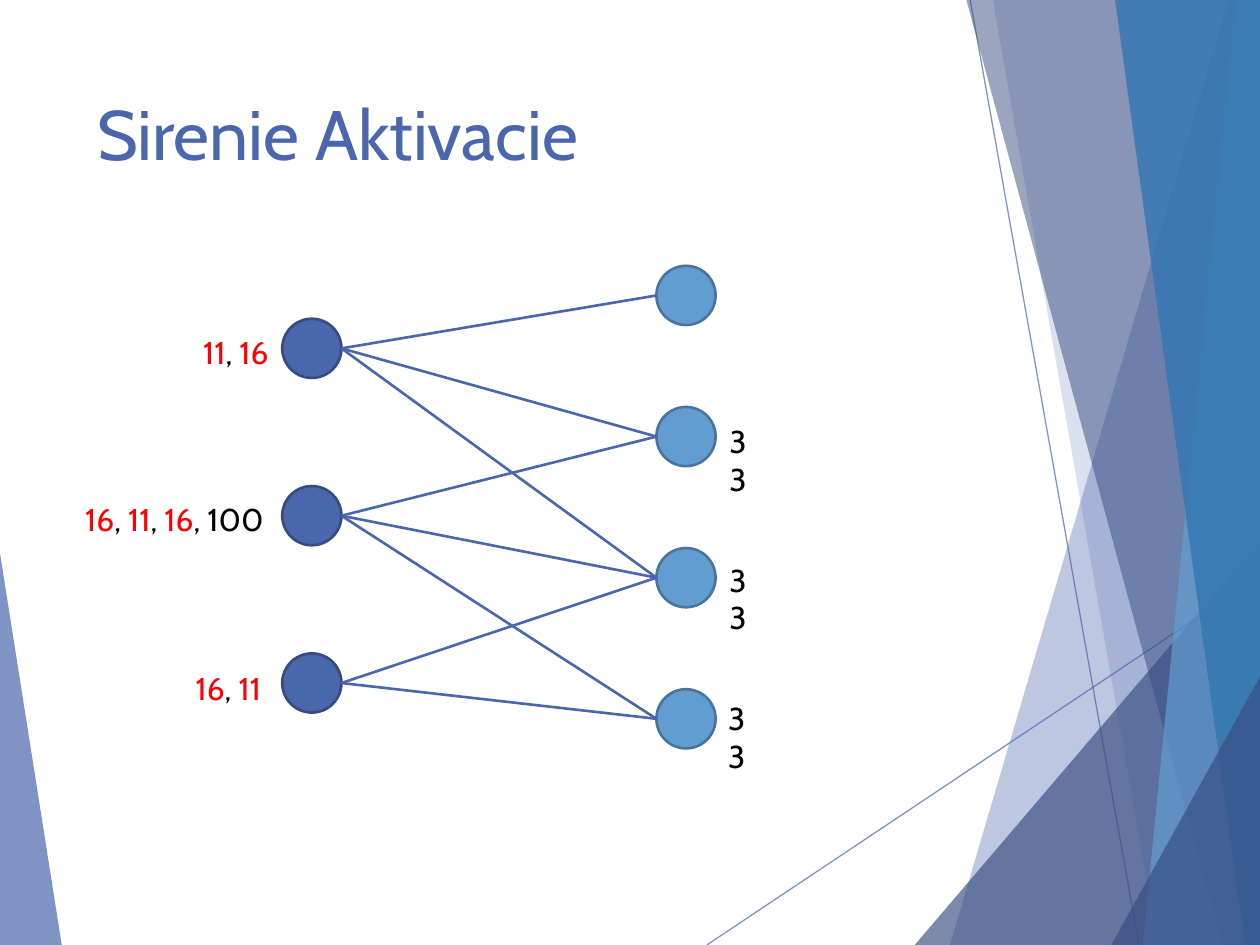
"""Builds the "Sirenie Aktivacie" slide: a two-layer network beside angular facets."""
from dataclasses import dataclass

from lxml import etree
from pptx import Presentation
from pptx.dml.color import RGBColor
from pptx.enum.shapes import MSO_CONNECTOR, MSO_SHAPE
from pptx.enum.text import MSO_ANCHOR, PP_ALIGN
from pptx.oxml.ns import qn
from pptx.util import Inches, Pt

STRAIGHT = MSO_CONNECTOR.STRAIGHT
OVAL = MSO_SHAPE.OVAL
TOP = MSO_ANCHOR.TOP
LEFT, RIGHT = PP_ALIGN.LEFT, PP_ALIGN.RIGHT

WIDTH, HEIGHT = Inches(10), Inches(7.5)
COLS, ROWS = 100, 75
FONT = "Cabin"
BLUE, NAVY, SKY, OCEAN = "4A66AC", "384C81", "629DD1", "3477B2"
RED, BLACK = "FF0000", "000000"
NODE = 4.7


@dataclass
class Facet:
    """A translucent polygon, with its corners in grid units."""
    points: list[tuple[float, float]]
    color: str
    opacity: int


@dataclass
class Layer:
    """A column of evenly spaced nodes."""
    left: float
    top: float
    step: float
    count: int
    fill: str
    line: str

    def y(self, i: int) -> float:
        """Return the top of node i."""
        return self.top + i * self.step


@dataclass
class Label:
    """A text box made of coloured runs."""
    left: float
    top: float
    width: float
    runs: list[tuple[str, str]]
    align: int = RIGHT
    wrap: bool = False


FACETS = [
    Facet([(0, 43.9), (4.9, 75), (0, 75)], BLUE, 70),
    Facet([(97.5, 0), (75.4, 75), (100, 75), (100, 0)], BLUE, 36),
    Facet([(78.8, 0), (91.9, 75), (100, 75), (100, 0)], BLUE, 20),
    Facet([(72.6, 75), (100, 42.9), (100, 75)], NAVY, 66),
    Facet([(76.7, 0), (97, 75), (100, 75), (100, 0)], NAVY, 50),
    Facet([(98.1, 0), (90.7, 75), (100, 75), (100, 0)], SKY, 70),
    Facet([(88.5, 0), (98.8, 75), (100, 75), (100, 0)], OCEAN, 82),
    Facet([(88.2, 75), (100, 53.7), (100, 75)], NAVY, 66),
]
RAYS = [((56.1, 75), (100, 45.7)), ((77, 0), (90.4, 75))]
INPUTS = Layer(22.4, 25.3, 13.28, 3, BLUE, "374B7F")
OUTPUTS = Layer(52.1, 21.1, 11.2, 4, SKY, "49749B")
EDGES = [(0, 0), (0, 1), (0, 2), (1, 1), (1, 2), (1, 3), (2, 2), (2, 3)]
COMMA = (", ", BLACK)
LABELS = [
    Label(14, 25.9, 8.3, [("11", RED), COMMA, ("16", RED)]),
    Label(4.7, 39.2, 17.2, [("16", RED), COMMA, ("11", RED), COMMA,
                            ("16", RED), (", 100", BLACK)]),
    Label(13.4, 52.6, 8.3, [("16", RED), COMMA, ("11", RED)]),
] + [Label(left, top, 4.6, [("33", BLACK)], LEFT, True)
     for left, top in ((56.9, 33), (56.9, 44), (56.8, 55))]


def gx(cols: float) -> int:
    """Convert grid columns to a length."""
    return round(WIDTH * cols / COLS)


def gy(rows: float) -> int:
    """Convert grid rows to a length."""
    return round(HEIGHT * rows / ROWS)


def rgb(color: str) -> RGBColor:
    """Convert a hex string to a colour."""
    return RGBColor.from_string(color)


def set_opacity(s, percent: int) -> None:
    """Make the shape's first solid colour translucent."""
    color = next(s._element.spPr.iter(qn("a:srgbClr")))
    etree.SubElement(color, qn("a:alpha")).set("val", str(percent * 1000))


def add_facet(slide, facet: Facet) -> None:
    """Draw one background polygon."""
    points = [(gx(x), gy(y)) for x, y in facet.points]
    builder = slide.shapes.build_freeform(*points[0])
    builder.add_line_segments(points[1:], close=True)
    s = builder.convert_to_shape()
    s.shadow.inherit = False
    s.fill.solid()
    s.fill.fore_color.rgb = rgb(facet.color)
    s.line.fill.background()
    set_opacity(s, facet.opacity)


def add_line(slide, start: tuple[float, float], end: tuple[float, float],
             weight: float, opacity: int = 100) -> None:
    """Draw a straight blue line between two grid points."""
    s = slide.shapes.add_connector(STRAIGHT, gx(start[0]), gy(start[1]),
                                   gx(end[0]), gy(end[1]))
    s.line.color.rgb = rgb(BLUE)
    s.line.width = Pt(weight)
    if opacity < 100:
        set_opacity(s, opacity)
    etree.SubElement(s._element.spPr, qn("a:effectLst"))


def add_layer(slide, layer: Layer) -> None:
    """Draw the nodes of one layer."""
    for i in range(layer.count):
        s = slide.shapes.add_shape(OVAL, gx(layer.left), gy(layer.y(i)),
                                   gx(NODE), gy(NODE))
        s.shadow.inherit = False
        s.fill.solid()
        s.fill.fore_color.rgb = rgb(layer.fill)
        s.line.color.rgb = rgb(layer.line)
        s.line.width = Pt(1.5)


def add_label(slide, label: Label) -> None:
    """Write one label with its coloured runs."""
    s = slide.shapes.add_textbox(gx(label.left), gy(label.top),
                                 gx(label.width), gy(4))
    tf = s.text_frame
    tf.word_wrap = label.wrap
    p = tf.paragraphs[0]
    p.alignment = label.align
    p.font.name, p.font.size = FONT, Pt(18)
    for text, color in label.runs:
        r = p.add_run()
        r.text = text
        r.font.name, r.font.size = FONT, Pt(18)
        r.font.color.rgb = rgb(color)


def set_title(slide, text: str) -> None:
    """Place and format the title placeholder."""
    s = slide.shapes.title
    s.left, s.top, s.width, s.height = gx(6.7), gy(6.7), gx(69.4), gy(14.4)
    tf = s.text_frame
    tf.text = text
    tf.vertical_anchor = TOP
    p = tf.paragraphs[0]
    p.alignment = LEFT
    p.font.name, p.font.size = FONT, Pt(40)
    p.font.color.rgb = rgb(BLUE)


def main() -> None:
    """Build and save the slide."""
    prs = Presentation()
    prs.slide_width, prs.slide_height = WIDTH, HEIGHT
    slide = prs.slides.add_slide(prs.slide_layouts[5])
    set_title(slide, "Sirenie Aktivacie")
    add_facet(slide, FACETS[0])
    for start, end in RAYS:
        add_line(slide, start, end, 0.75, 70)
    for facet in FACETS[1:]:
        add_facet(slide, facet)
    for layer in (INPUTS, OUTPUTS):
        add_layer(slide, layer)
    for i, j in EDGES:
        add_line(slide, (INPUTS.left + NODE, INPUTS.y(i) + NODE / 2),
                 (OUTPUTS.left, OUTPUTS.y(j) + NODE / 2), 1.5)
    for label in LABELS:
        add_label(slide, label)
    prs.save("out.pptx")


if __name__ == "__main__":
    main()
